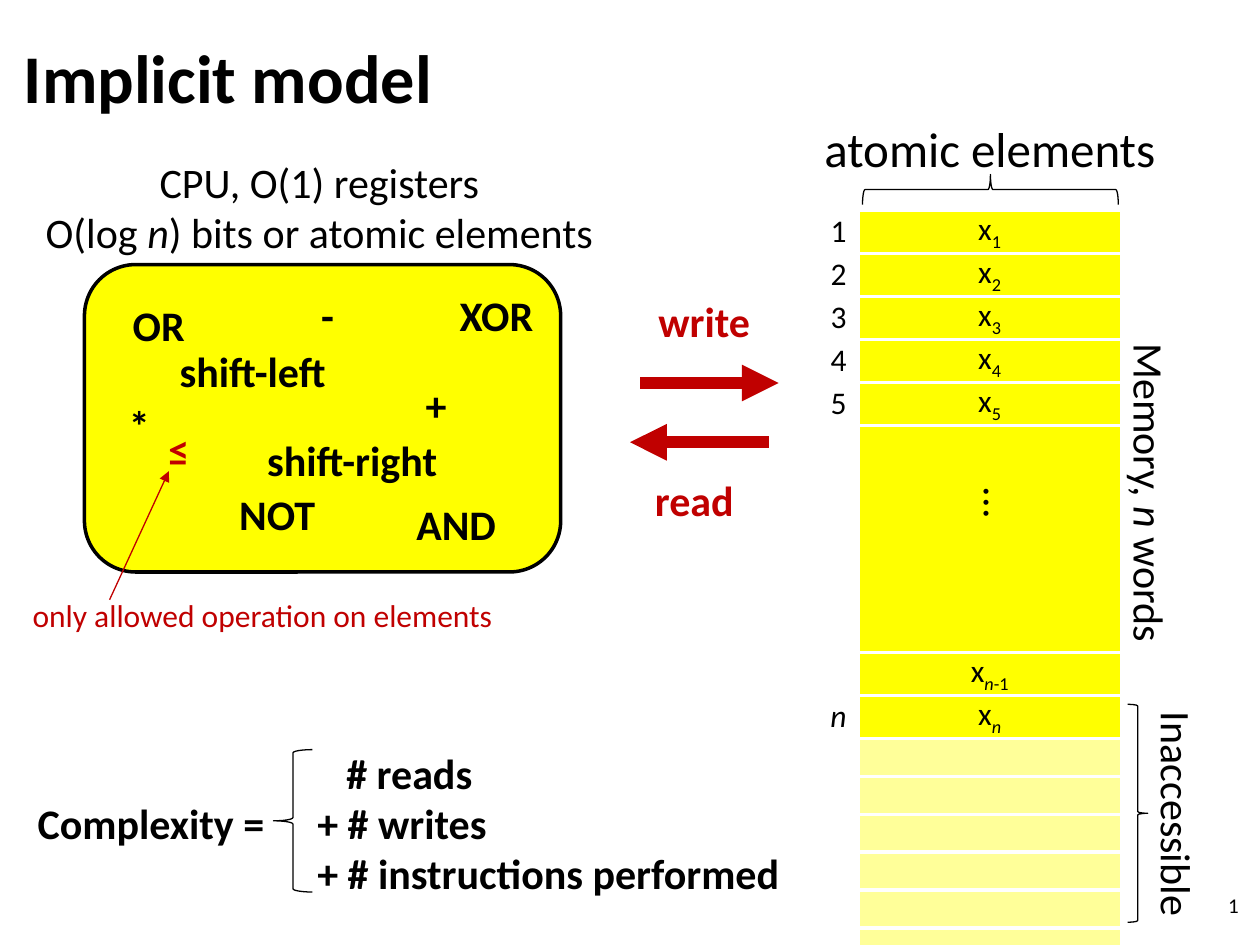
from pptx import Presentation
from pptx.dml.color import RGBColor
from pptx.enum.shapes import MSO_CONNECTOR, MSO_SHAPE
from pptx.enum.text import MSO_ANCHOR, MSO_AUTO_SIZE, PP_ALIGN
from pptx.oxml.ns import qn
from pptx.util import Pt
from lxml.etree import SubElement

BLACK = RGBColor(0, 0, 0)
WHITE = RGBColor(255, 255, 255)
RED = RGBColor(192, 0, 0)
YELLOW = RGBColor(255, 255, 0)
PALE = RGBColor(255, 255, 153)
PX = 9144
FONT = "Calibri"
MID = PP_ALIGN.CENTER
LEFT = PP_ALIGN.LEFT


def emu(*nums):
    return [n * PX for n in nums]


class Page:
    """Draws styled elements on one slide."""

    def __init__(self, deck):
        self.slide = deck.slides.add_slide(deck.slide_layouts[5])
        self.shapes = self.slide.shapes

    def runs(self, para, parts, size, color=BLACK, bold=False, align=MID):
        para.alignment = align
        for part in [parts] if isinstance(parts, str) else parts:
            text, style = (part, "") if isinstance(part, str) else part
            run = para.add_run()
            run.text = text
            font = run.font
            font.name, font.size, font.bold = FONT, Pt(size), bold
            font.italic = "i" in style
            font.color.rgb = color
            if "s" in style:
                font._element.set("baseline", "-25000")

    def title(self, text, box):
        shape = self.shapes.title
        shape.left, shape.top, shape.width, shape.height = emu(*box)
        frame = shape.text_frame
        frame.auto_size = MSO_AUTO_SIZE.NONE
        frame.vertical_anchor = MSO_ANCHOR.MIDDLE
        para = frame.paragraphs[0]
        para.line_spacing = 0.9
        self.runs(para, text, 39, bold=True, align=LEFT)

    def text(self, lines, box, size=24, color=BLACK, bold=False, align=MID,
             turn=0, tabs=(), anchor=MSO_ANCHOR.TOP):
        shape = self.shapes.add_textbox(*emu(*box))
        shape.rotation = turn
        frame = shape.text_frame
        frame.word_wrap = True
        frame.auto_size = MSO_AUTO_SIZE.SHAPE_TO_FIT_TEXT
        frame.vertical_anchor = anchor
        for k, line in enumerate(lines):
            para = frame.add_paragraph() if k else frame.paragraphs[0]
            self.runs(para, line, size, color, bold, align)
            if tabs:
                stops = SubElement(para._p.get_or_add_pPr(), qn("a:tabLst"))
                SubElement(stops, qn("a:tab"), pos=str(tabs[k] * PX), algn="l")

    def shape(self, kind, box, width=0.75, fill=None, turn=0, flip=False):
        shape = self.shapes.add_shape(kind, *emu(*box))
        shape.shadow.inherit = False
        shape.rotation = turn
        shape.line.color.rgb = BLACK
        shape.line.width = Pt(width)
        if fill is None:
            shape.fill.background()
        else:
            shape.fill.solid()
            shape.fill.fore_color.rgb = fill
        if flip:
            shape._element.spPr.find(qn("a:xfrm")).set("flipH", "1")

    def arrow(self, ends, width):
        line = self.shapes.add_connector(MSO_CONNECTOR.STRAIGHT, *emu(*ends))
        line.line.color.rgb = RED
        line.line.width = Pt(width)
        edge = line._element.spPr.find(qn("a:ln"))
        SubElement(edge, qn("a:tailEnd"), type="triangle")
        SubElement(line._element.spPr, qn("a:effectLst"))

    def cell(self, cell, parts, fill):
        cell.margin_left = cell.margin_right = 0
        cell.margin_top = cell.margin_bottom = 0
        cell.vertical_anchor = MSO_ANCHOR.MIDDLE
        if parts:
            self.runs(cell.text_frame.paragraphs[0], parts, 18)
        props = cell._tc.get_or_add_tcPr()
        for side in "LRTB":
            edge = SubElement(props, qn("a:ln" + side), w=str(int(Pt(2.25))))
            paint = SubElement(edge, qn("a:solidFill"))
            SubElement(paint, qn("a:srgbClr"), val=str(WHITE))
        if fill is None:
            cell.fill.background()
        else:
            cell.fill.solid()
            cell.fill.fore_color.rgb = fill

    def table(self, rows, box, cols, high, span):
        table = self.shapes.add_table(len(rows), len(cols), *emu(*box)).table
        table.first_row = table.horz_banding = False
        for col, wide in zip(table.columns, cols):
            col.width = wide * PX
        for k, (label, value, fill) in enumerate(rows):
            table.rows[k].height = high * PX
            self.cell(table.cell(k, 0), label, None)
            self.cell(table.cell(k, 1), value, fill)
        first, last = span
        table.cell(first, 1).merge(table.cell(last, 1))


def main():
    deck = Presentation()
    deck.slide_width, deck.slide_height = emu(1000, 750)
    page = Page(deck)
    page.title("Implicit model", (9, 29, 900, 71))
    page.text(["1"], (760, 698, 233, 40), 12, align=PP_ALIGN.RIGHT,
              anchor=MSO_ANCHOR.MIDDLE)

    rows = [(str(k), ["x", (str(k), "s")], YELLOW) for k in range(1, 6)]
    rows += [("", "", YELLOW)] * 6
    rows += [("", ["x", ("n", "is"), ("-1", "s")], YELLOW),
             ([("n", "i")], ["x", ("n", "is")], YELLOW)]
    rows += [("", "", PALE)] * 6
    page.table(rows, (650, 167, 240, 570), (31, 209), 24, (5, 10))
    page.text([["Memory, ", ("n", "i"), " words"]], (732, 366, 362, 50), turn=90)
    page.shape(MSO_SHAPE.LEFT_BRACE, (774, 49, 24, 203), turn=90)
    page.text(["atomic elements"], (640, 89, 291, 57), 28)

    page.shape(MSO_SHAPE.ROUNDED_RECTANGLE, (67, 210, 378, 244), 2, YELLOW)
    for word, left, top, wide, color in [
            ("-", 201, 225, 118, BLACK), ("NOT", 161, 383, 118, BLACK),
            ("shift-right", 177, 340, 205, BLACK), ("XOR", 335, 225, 118, BLACK),
            ("AND", 303, 391, 118, BLACK), ("≤", 83, 332, 118, RED),
            ("+", 287, 296, 118, BLACK), ("shift-left", 98, 269, 205, BLACK),
            ("OR", 67, 233, 118, BLACK), ("*", 83, 312, 55, BLACK),
            ("write", 492, 230, 134, RED), ("read", 484, 372, 134, RED)]:
        page.text([word], (left, top, wide, 50), color=color, bold=True)
    page.text(["CPU, O(1) registers",
               ["O(log ", ("n", "i"), ") bits or atomic elements"]],
              (-12, 119, 531, 91))
    page.arrow((508, 304, 618, 304), 7)
    page.arrow((610, 351, 500, 351), 7)

    page.text(["\t# reads", "Complexity =\t+ # writes",
               "\t+ # instructions performed"], (20, 588, 681, 131),
              bold=True, align=LEFT, tabs=(245, 222, 222))
    page.shape(MSO_SHAPE.LEFT_BRACE, (217, 595, 31, 113))
    page.arrow((87, 476, 134, 374), 0.75)
    page.text(["only allowed operation on elements"], (16, 468, 488, 40), 18,
              RED, align=LEFT)
    page.text(["..."], (743, 374, 102, 50), turn=90)
    page.text(["Inaccessible"], (840, 621, 189, 50), turn=90)
    page.shape(MSO_SHAPE.LEFT_BRACE, (895, 559, 16, 173), flip=True)
    deck.save("out.pptx")


if __name__ == "__main__":
    main()
